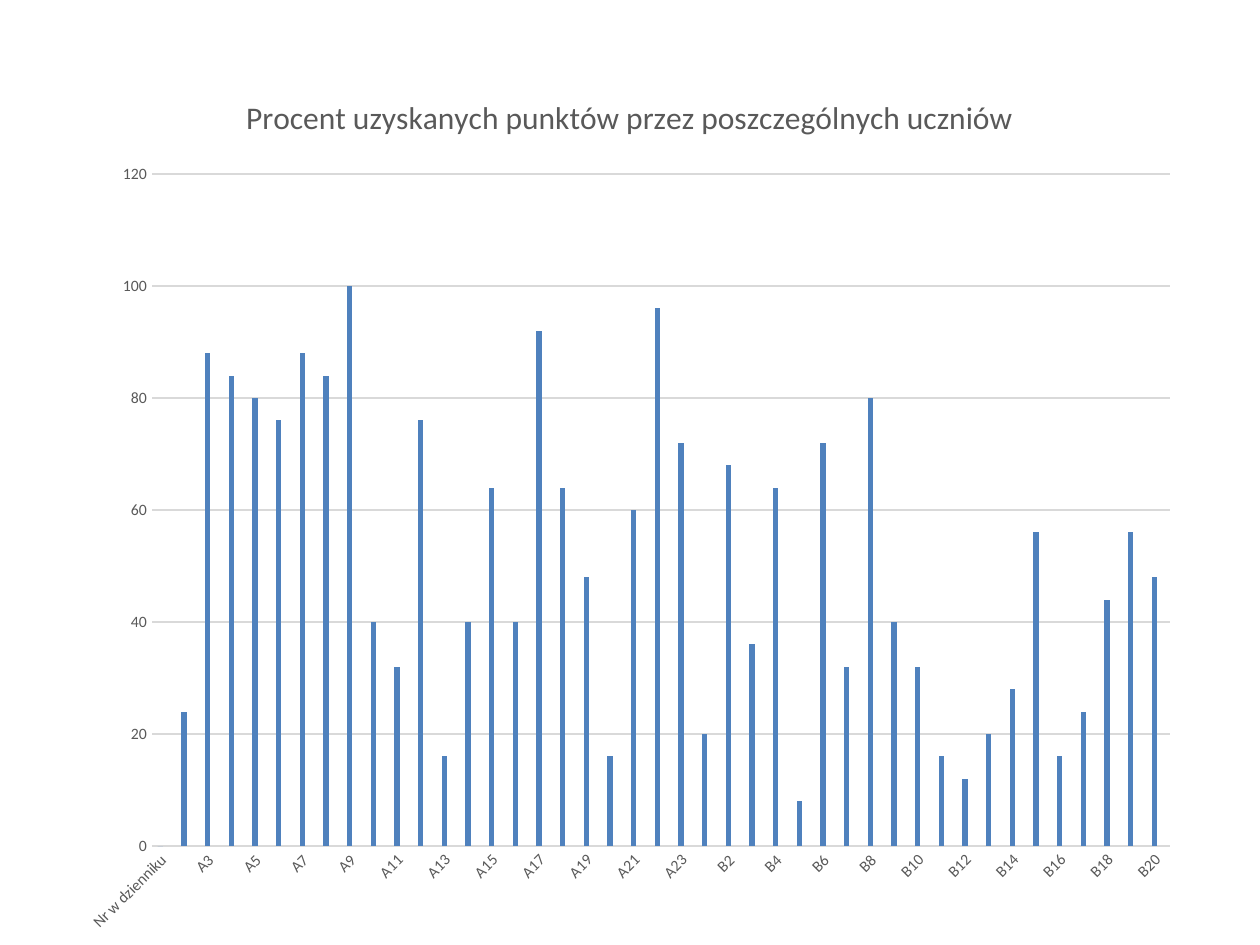
from lxml.etree import SubElement
from pptx import Presentation
from pptx.chart.data import CategoryChartData as ChartData
from pptx.dml.color import RGBColor as Color
from pptx.enum.chart import XL_CHART_TYPE as ChartType, XL_TICK_MARK as TickMark
from pptx.oxml.ns import qn
from pptx.util import Cm, Pt

# Content
TITLE = "Procent uzyskanych punktów przez poszczególnych uczniów"
HEADING = "Nr w dzienniku"
# Class letter, first register number, scores in register order
CLASSES = [
    ("A", 2, [24, 88, 84, 80, 76, 88, 84, 100, 40, 32, 76, 16, 40, 64, 40,
              92, 64, 48, 16, 60, 96, 72]),
    ("B", 1, [20, 68, 36, 64, 8, 72, 32, 80, 40, 32, 16, 12, 20, 28, 56,
              16, 24, 44, 56, 48]),
]

THEME = {
    "font": "Calibri",
    "text": Color.from_string("595959"),
    "rule": Color.from_string("D9D9D9"),
    "bars": [Color.from_string("4F81BD"), Color.from_string("C0504D")],
    "title_size": Pt(18),
    "label_size": Pt(9),
    "base_size": Pt(10),
    "rule_width": Pt(0.75),
}

# Left, top, width and height in centimetres on the page
CHART_BOX = (1.35, 1.32, 22.68, 17.81)
PLOT_BOX = (3.06, 3.51, 20.52, 13.55)


def style_font(font, size):
    font.name = THEME["font"]
    font.size = size
    font.bold = False
    font.color.rgb = THEME["text"]


def style_rule(line):
    line.color.rgb = THEME["rule"]
    line.width = THEME["rule_width"]


def place_plot(chart):
    """Fix the inner plot area as fractions of the chart frame."""
    left, top, width, height = CHART_BOX
    plot_left, plot_top, plot_width, plot_height = PLOT_BOX
    settings = [
        ("layoutTarget", "inner"), ("xMode", "edge"), ("yMode", "edge"),
        ("x", (plot_left - left) / width), ("y", (plot_top - top) / height),
        ("w", plot_width / width), ("h", plot_height / height),
    ]
    area = chart.plots[0]._element.getparent()
    layout = area.find(qn("c:layout"))
    if layout is None:
        layout = SubElement(area, qn("c:layout"))
        area.insert(0, layout)
    manual = SubElement(layout, qn("c:manualLayout"))
    for name, value in settings:
        SubElement(manual, qn(f"c:{name}")).set("val", str(value))


def main():
    deck = Presentation()
    deck.slide_width, deck.slide_height = Cm(25.4), Cm(19.05)
    page = deck.slides.add_slide(deck.slide_layouts[6])

    # Chart data: the heading leads as an empty score, the second series is blank
    names, scores = [HEADING], [0]
    for letter, first, results in CLASSES:
        names += [f"{letter}{number}" for number, _ in enumerate(results, first)]
        scores += results
    data = ChartData()
    data.categories = names
    data.add_series("Series 1", scores)
    data.add_series("Series 2", [None] * len(names))
    frame = page.shapes.add_chart(
        ChartType.COLUMN_CLUSTERED, *map(Cm, CHART_BOX), data)
    chart = frame.chart
    style_font(chart.font, THEME["base_size"])
    chart.has_legend = False

    # Title
    chart.has_title = True
    para = chart.chart_title.text_frame.paragraphs[0]
    para.text = TITLE
    style_font(para.font, THEME["title_size"])
    chart.chart_title.include_in_layout = False

    # Bars
    plot = chart.plots[0]
    plot.gap_width, plot.overlap = 219, -27
    plot.vary_by_categories = False
    for series, color in zip(plot.series, THEME["bars"]):
        series.format.fill.solid()
        series.format.fill.fore_color.rgb = color
        series.invert_if_negative = False

    # Axes
    students, percent = chart.category_axis, chart.value_axis
    for axis in (students, percent):
        axis.major_tick_mark = axis.minor_tick_mark = TickMark.NONE
        style_font(axis.tick_labels.font, THEME["label_size"])
    style_rule(students.format.line)
    slanted = students._element.find(qn("c:txPr")).find(qn("a:bodyPr"))
    slanted.set("rot", str(-45 * 60000))
    percent.minimum_scale, percent.maximum_scale, percent.major_unit = 0, 120, 20
    percent.format.line.fill.background()
    percent.has_major_gridlines = True
    style_rule(percent.major_gridlines.format.line)

    place_plot(chart)
    deck.save("out.pptx")


if __name__ == "__main__":
    main()
